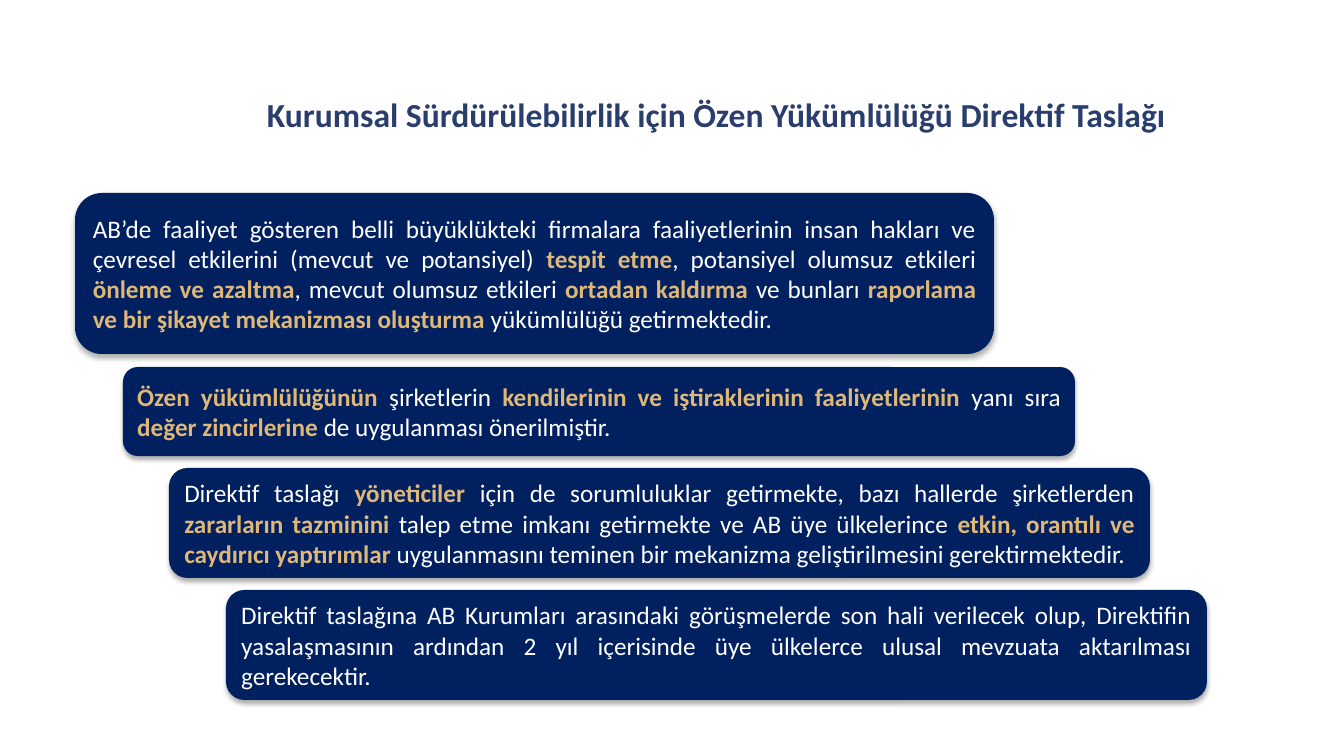
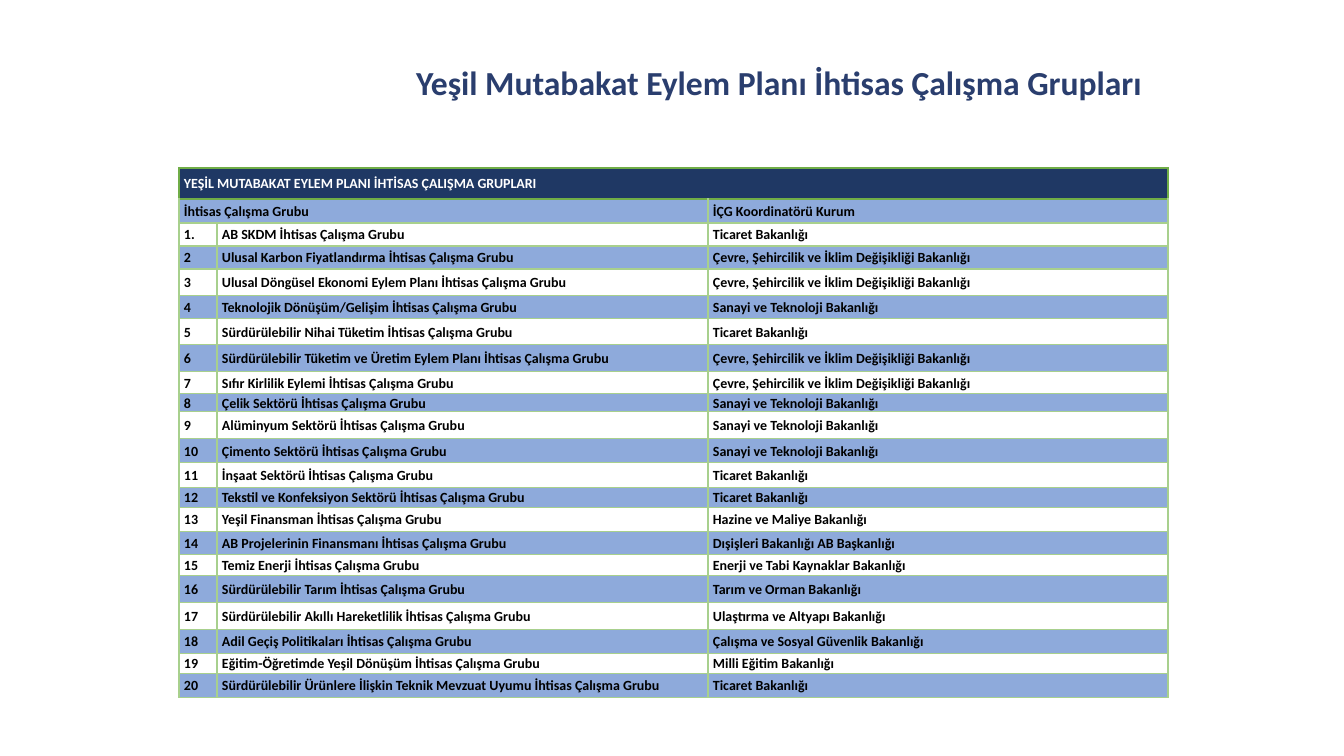
from dataclasses import dataclass
from typing import NamedTuple

import lxml.etree
import pptx
import pptx.dml.color
import pptx.enum.shapes
import pptx.enum.text
import pptx.oxml
import pptx.oxml.ns
import pptx.presentation
import pptx.shapes.autoshape
import pptx.slide
import pptx.table
import pptx.text.text
import pptx.util

EMU_PER_PX = 914400 / 100.8
ALIGN = pptx.enum.text.PP_ALIGN
MIDDLE = pptx.enum.text.MSO_ANCHOR.MIDDLE


@dataclass(frozen=True)
class Theme:
    font: str = "Calibri"
    title: str = "2A3E6E"
    card: str = "002060"
    highlight: str = "DFB777"
    white: str = "FFFFFF"
    black: str = "000000"
    table_header: str = "1F3864"
    band: str = "8EAADB"
    grid: str = "A8D08D"
    header_grid: str = "70AD47"
    title_size: int = 24
    card_size: int = 18
    table_size: int = 10
    grid_width: int = 1


THEME = Theme()


class Box(NamedTuple):
    left: int
    top: int
    width: int
    height: int

    def emu(self) -> tuple[pptx.util.Emu, ...]:
        return tuple(px(length) for length in self)


class Phrase(NamedTuple):
    text: str
    strong: bool = False


class Card(NamedTuple):
    box: Box
    phrases: list[Phrase]


class WorkingGroup(NamedTuple):
    name: str
    coordinator: str
    row_height: int


CARDS = [
    Card(Box(75, 193, 919, 161), [
        Phrase("AB’de faaliyet gösteren belli büyüklükteki firmalara faaliyetlerinin insan "
               "hakları ve çevresel etkilerini (mevcut ve potansiyel) "),
        Phrase("tespit etme", True),
        Phrase(", potansiyel olumsuz etkileri "),
        Phrase("önleme ve azaltma", True),
        Phrase(", mevcut olumsuz etkileri "),
        Phrase("ortadan kaldırma ", True),
        Phrase("ve bunları "),
        Phrase("raporlama ve bir şikayet mekanizması oluşturma ", True),
        Phrase("yükümlülüğü getirmektedir."),
    ]),
    Card(Box(123, 367, 952, 89), [
        Phrase("Özen yükümlülüğünün ", True),
        Phrase("şirketlerin "),
        Phrase("kendilerinin ve iştiraklerinin faaliyetlerinin", True),
        Phrase(" yanı sıra "),
        Phrase("değer zincirlerine ", True),
        Phrase("de uygulanması önerilmiştir."),
    ]),
    Card(Box(169, 468, 981, 110), [
        Phrase("Direktif taslağı "),
        Phrase("yöneticiler", True),
        Phrase(" için de sorumluluklar getirmekte, bazı hallerde şirketlerden "),
        Phrase("zararların tazminini ", True),
        Phrase("talep etme imkanı getirmekte ve AB üye ülkelerince "),
        Phrase("etkin, orantılı ve caydırıcı yaptırımlar", True),
        Phrase(" uygulanmasını teminen bir mekanizma geliştirilmesini gerektirmektedir."),
    ]),
    Card(Box(226, 590, 981, 110), [
        Phrase("Direktif taslağına AB Kurumları arasındaki görüşmelerde son hali verilecek "
               "olup, Direktifin yasalaşmasının ardından 2 yıl içerisinde üye ülkelerce "
               "ulusal mevzuata aktarılması gerekecektir."),
    ]),
]

TRADE = "Ticaret Bakanlığı"
CLIMATE = "Çevre, Şehircilik ve İklim Değişikliği Bakanlığı"
INDUSTRY = "Sanayi ve Teknoloji Bakanlığı"
GROUP_SUFFIX = " İhtisas Çalışma Grubu"
GROUPS = [
    WorkingGroup("AB SKDM", TRADE, 23),
    WorkingGroup("Ulusal Karbon Fiyatlandırma", CLIMATE, 23),
    WorkingGroup("Ulusal Döngüsel Ekonomi Eylem Planı", CLIMATE, 27),
    WorkingGroup("Teknolojik Dönüşüm/Gelişim", INDUSTRY, 23),
    WorkingGroup("Sürdürülebilir Nihai Tüketim", TRADE, 26),
    WorkingGroup("Sürdürülebilir Tüketim ve Üretim Eylem Planı", CLIMATE, 27),
    WorkingGroup("Sıfır Kirlilik Eylemi", CLIMATE, 22),
    WorkingGroup("Çelik Sektörü", INDUSTRY, 18),
    WorkingGroup("Alüminyum Sektörü", INDUSTRY, 27),
    WorkingGroup("Çimento Sektörü", INDUSTRY, 24),
    WorkingGroup("İnşaat Sektörü", TRADE, 25),
    WorkingGroup("Tekstil ve Konfeksiyon Sektörü", TRADE, 20),
    WorkingGroup("Yeşil Finansman", "Hazine ve Maliye Bakanlığı", 24),
    WorkingGroup("AB Projelerinin Finansmanı", "Dışişleri Bakanlığı AB Başkanlığı", 23),
    WorkingGroup("Temiz Enerji", "Enerji ve Tabi Kaynaklar Bakanlığı", 21),
    WorkingGroup("Sürdürülebilir Tarım", "Tarım ve Orman Bakanlığı", 27),
    WorkingGroup("Sürdürülebilir Akıllı Hareketlilik", "Ulaştırma ve Altyapı Bakanlığı", 27),
    WorkingGroup("Adil Geçiş Politikaları", "Çalışma ve Sosyal Güvenlik Bakanlığı", 24),
    WorkingGroup("Eğitim-Öğretimde Yeşil Dönüşüm", "Milli Eğitim Bakanlığı", 20),
    WorkingGroup("Sürdürülebilir Ürünlere İlişkin Teknik Mevzuat Uyumu", TRADE, 24),
]
HEADER_HEIGHTS = [31, 24]
COLUMN_WIDTHS = [38, 491, 460]


def px(length: int) -> pptx.util.Emu:
    return pptx.util.Emu(round(length * EMU_PER_PX))


def rgb(color: str) -> pptx.dml.color.RGBColor:
    return pptx.dml.color.RGBColor.from_string(color)


def add_run(paragraph: pptx.text.text._Paragraph, text: str, size: int,
            color: str, bold: bool) -> None:
    run = paragraph.add_run()
    run.text = text
    run.font.name = THEME.font
    run.font.size = pptx.util.Pt(size)
    run.font.bold = bold
    run.font.color.rgb = rgb(color)


def add_title(slide: pptx.slide.Slide, text: str, box: Box, alignment: ALIGN) -> None:
    frame = slide.shapes.add_textbox(*box.emu()).text_frame
    frame.word_wrap = True
    frame.auto_size = pptx.enum.text.MSO_AUTO_SIZE.SHAPE_TO_FIT_TEXT
    paragraph = frame.paragraphs[0]
    paragraph.alignment = alignment
    add_run(paragraph, text, THEME.title_size, THEME.title, True)


def add_shadow(shape: pptx.shapes.autoshape.Shape) -> None:
    """Give the shape a soft shadow straight below it."""
    shape.shadow.inherit = False
    effects = shape._element.spPr.find(pptx.oxml.ns.qn("a:effectLst"))
    shadow = lxml.etree.SubElement(
        effects, pptx.oxml.ns.qn("a:outerShdw"), blurRad=str(pptx.util.Pt(3.5)),
        dist=str(pptx.util.Pt(2.2)), dir="5400000", rotWithShape="0")
    color = lxml.etree.SubElement(shadow, pptx.oxml.ns.qn("a:srgbClr"), val=THEME.black)
    lxml.etree.SubElement(color, pptx.oxml.ns.qn("a:alpha"), val="32000")


def add_card(slide: pptx.slide.Slide, card: Card) -> None:
    shape = slide.shapes.add_shape(
        pptx.enum.shapes.MSO_SHAPE.ROUNDED_RECTANGLE, *card.box.emu())
    shape.fill.solid()
    shape.fill.fore_color.rgb = rgb(THEME.card)
    shape.line.fill.background()
    add_shadow(shape)
    frame = shape.text_frame
    frame.word_wrap = True
    frame.vertical_anchor = MIDDLE
    paragraph = frame.paragraphs[0]
    paragraph.alignment = ALIGN.JUSTIFY
    for phrase in card.phrases:
        color = THEME.highlight if phrase.strong else THEME.white
        add_run(paragraph, phrase.text, THEME.card_size, color, phrase.strong)


def set_borders(cell: pptx.table._Cell, color: str, top_color: str) -> None:
    properties = cell._tc.get_or_add_tcPr()
    sides = {"lnL": color, "lnR": color, "lnT": top_color, "lnB": color}
    for position, (side, side_color) in enumerate(sides.items()):
        line = lxml.etree.Element(pptx.oxml.ns.qn(f"a:{side}"),
                                  w=str(pptx.util.Pt(THEME.grid_width)))
        fill = lxml.etree.SubElement(line, pptx.oxml.ns.qn("a:solidFill"))
        lxml.etree.SubElement(fill, pptx.oxml.ns.qn("a:srgbClr"), val=side_color)
        properties.insert(position, line)


def fill_cell(cell: pptx.table._Cell, text: str, row: int) -> None:
    """Write and style one cell; row 0 is the heading, odd rows are banded."""
    cell.margin_left = cell.margin_right = px(5)
    cell.margin_top, cell.margin_bottom = px(1), px(0)
    cell.vertical_anchor = MIDDLE
    if row == 0 or row % 2:
        cell.fill.solid()
        cell.fill.fore_color.rgb = rgb(THEME.band if row else THEME.table_header)
    else:
        cell.fill.background()
    set_borders(cell, THEME.grid if row else THEME.header_grid,
                THEME.grid if row > 1 else THEME.header_grid)
    if text:
        add_run(cell.text_frame.paragraphs[0], text, THEME.table_size,
                THEME.black if row else THEME.white, True)


def add_group_table(slide: pptx.slide.Slide, left: int, top: int) -> None:
    rows = [
        ("YEŞİL MUTABAKAT EYLEM PLANI İHTİSAS ÇALIŞMA GRUPLARI", "", ""),
        (GROUP_SUFFIX.strip(), "", "İÇG Koordinatörü Kurum"),
    ]
    for number, group in enumerate(GROUPS, start=1):
        label = "1." if number == 1 else str(number)
        rows.append((label, group.name + GROUP_SUFFIX, group.coordinator))
    heights = HEADER_HEIGHTS + [group.row_height for group in GROUPS]
    box = Box(left, top, sum(COLUMN_WIDTHS), sum(heights))
    table = slide.shapes.add_table(len(rows), len(COLUMN_WIDTHS), *box.emu()).table
    table.first_row = table.horz_banding = False
    for column, width in zip(table.columns, COLUMN_WIDTHS):
        column.width = px(width)
    for row_index, (texts, height) in enumerate(zip(rows, heights)):
        table.rows[row_index].height = px(height)
        for column_index, text in enumerate(texts):
            fill_cell(table.cell(row_index, column_index), text, row_index)
    table.cell(0, 0).merge(table.cell(0, 2))
    table.cell(1, 0).merge(table.cell(1, 1))


def add_blank_slide(presentation: pptx.presentation.Presentation) -> pptx.slide.Slide:
    return presentation.slides.add_slide(presentation.slide_layouts[6])


def build_directive_slide(presentation: pptx.presentation.Presentation) -> None:
    slide = add_blank_slide(presentation)
    add_title(slide, "Kurumsal Sürdürülebilirlik için Özen Yükümlülüğü Direktif Taslağı",
              Box(257, 89, 1005, 92), ALIGN.JUSTIFY)
    for card in CARDS:
        add_card(slide, card)


def build_groups_slide(presentation: pptx.presentation.Presentation) -> None:
    slide = add_blank_slide(presentation)
    add_title(slide, "Yeşil Mutabakat Eylem Planı İhtisas Çalışma Grupları ",
              Box(244, 57, 1078, 50), ALIGN.CENTER)
    add_group_table(slide, left=179, top=168)


def main() -> None:
    presentation = pptx.Presentation()
    presentation.slide_width, presentation.slide_height = px(1344), px(756)
    build_directive_slide(presentation)
    build_groups_slide(presentation)
    presentation.save("out.pptx")


if __name__ == "__main__":
    main()
